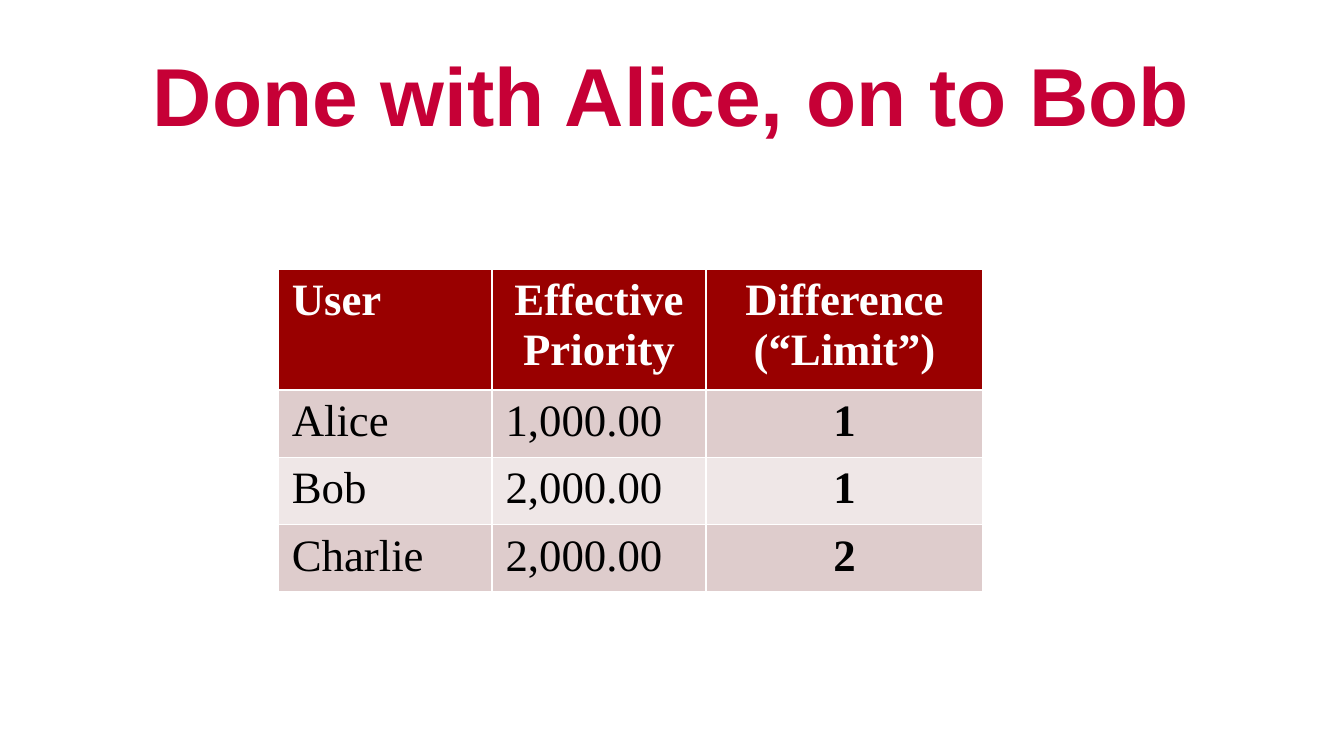
from pptx import Presentation
from pptx.dml.color import RGBColor
from pptx.enum.text import MSO_ANCHOR as ANCHOR, PP_ALIGN as ALIGN
from pptx.util import Cm, Pt

# Content
TITLE = "Done with Alice, on to Bob"
ROWS = [
    ("User", "Effective\nPriority", "Difference\n(“Limit”)"),
    ("Alice", "1,000.00", "1"),
    ("Bob", "2,000.00", "1"),
    ("Charlie", "2,000.00", "2"),
]

# Formats
COL_WIDTHS = (4.04, 4.04, 5.24)
ROW_HEIGHT = 1.04
HEADER_FILL, BAND_FILLS = "990000", ("DECCCC", "EFE7E7")
TITLE_FONT = dict(name="Arial", size=Pt(44), bold=True)
CELL_FONT = dict(name="Times New Roman", size=Pt(24))


def rgb(value):
    return RGBColor.from_string(value)


def write(tf, text, color, align, font):
    """Fill a text frame, one paragraph per line of text."""
    for i, line in enumerate(text.split("\n")):
        p = tf.paragraphs[0] if i == 0 else tf.add_paragraph()
        p.alignment = align
        r = p.add_run()
        r.text = line
        for key, value in font.items():
            setattr(r.font, key, value)
        r.font.color.rgb = rgb(color)


prs = Presentation()
prs.slide_width, prs.slide_height = Cm(25.4), Cm(14.28)
s = prs.slides.add_slide(prs.slide_layouts[6])

# Title across the full width
tf = s.shapes.add_textbox(0, Cm(0.81), prs.slide_width, Cm(1.9)).text_frame
tf.word_wrap = True
tf.vertical_anchor = ANCHOR.MIDDLE
write(tf, TITLE, "C60036", ALIGN.CENTER, TITLE_FONT)

# Priority table; the default table style supplies the white rules
frame = s.shapes.add_table(len(ROWS), len(COL_WIDTHS), Cm(5.26), Cm(5.08),
                           Cm(sum(COL_WIDTHS)), Cm(ROW_HEIGHT * len(ROWS)))
table = frame.table
for column, width in zip(table.columns, COL_WIDTHS):
    column.width = Cm(width)

last = len(COL_WIDTHS) - 1
for i, row in enumerate(ROWS):
    header = i == 0
    for j, text in enumerate(row):
        cell = table.cell(i, j)
        cell.fill.solid()
        cell.fill.fore_color.rgb = rgb(HEADER_FILL if header else BAND_FILLS[(i - 1) % 2])
        centred = j == last or (header and j > 0)
        write(cell.text_frame, text, "FFFFFF" if header else "000000",
              ALIGN.CENTER if centred else ALIGN.LEFT,
              dict(CELL_FONT, bold=header or j == last))

prs.save("out.pptx")
